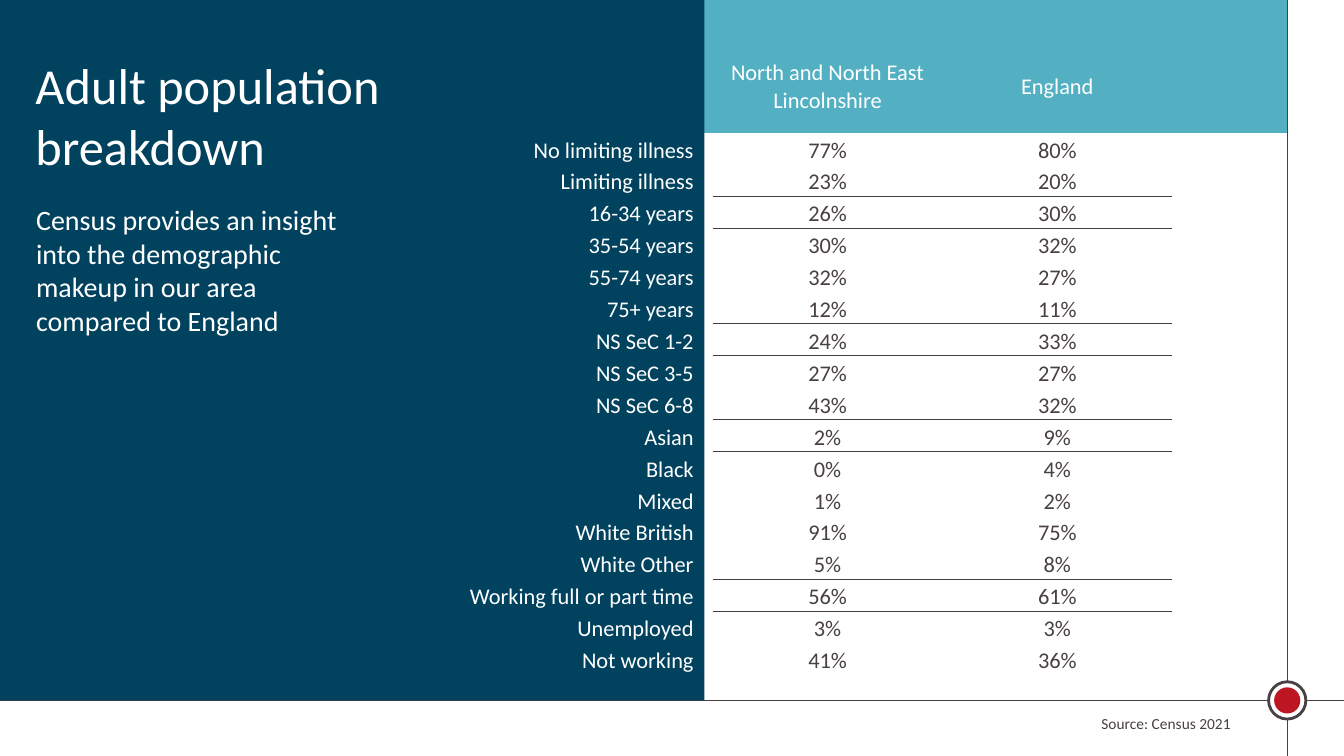
from lxml.etree import SubElement
from pptx import Presentation
from pptx.dml.color import RGBColor
from pptx.enum.shapes import MSO_CONNECTOR, MSO_SHAPE
from pptx.enum.text import MSO_ANCHOR, PP_ALIGN
from pptx.oxml.ns import qn
from pptx.util import Cm, Pt

WHITE = RGBColor(0xFF, 0xFF, 0xFF)
NAVY = RGBColor(0x01, 0x42, 0x5F)
TEAL = RGBColor(0x53, 0xB0, 0xC2)
CHARCOAL = RGBColor(0x48, 0x40, 0x43)
RED = RGBColor(0xBD, 0x16, 0x22)
NO_GRID_STYLE = "{2D5ABB26-0587-4C30-8999-92F81FD0307C}"

SLIDE_WIDTH, SLIDE_HEIGHT = 33.87, 19.05
RULE_X, RULE_Y = 32.44, 17.65
COLUMN_WIDTHS = (6.99, 5.79, 5.79)
HEADER_HEIGHT, BODY_HEIGHT = 2.29, 13.67

HEADINGS = ("", "North and North East Lincolnshire", "England")
GROUPS = (
    (("No limiting illness", "77%", "80%"),
     ("Limiting illness", "23%", "20%")),
    (("16-34 years", "26%", "30%"),
     ("35-54 years", "30%", "32%"),
     ("55-74 years", "32%", "27%"),
     ("75+ years", "12%", "11%")),
    (("NS SeC 1-2", "24%", "33%"),
     ("NS SeC 3-5", "27%", "27%"),
     ("NS SeC 6-8", "43%", "32%")),
    (("Asian", "2%", "9%"),
     ("Black", "0%", "4%"),
     ("Mixed", "1%", "2%"),
     ("White British", "91%", "75%"),
     ("White Other", "5%", "8%")),
    (("Working full or part time", "56%", "61%"),
     ("Unemployed", "3%", "3%"),
     ("Not working", "41%", "36%")),
)


class CensusSlide:
    """Draws styled elements on one slide, with lengths in centimetres."""

    font_name = "Calibri"

    def __init__(self, presentation):
        self.slide = presentation.slides.add_slide(presentation.slide_layouts[5])
        self.shapes = self.slide.shapes

    def apply(self, target, values):
        for name, value in values.items():
            setattr(target, name, value)

    def fill_text(self, text_frame, text, size, color, alignment=PP_ALIGN.LEFT):
        text_frame.text = text
        paragraph = text_frame.paragraphs[0]
        paragraph.alignment = alignment
        for run in paragraph.runs:
            self.apply(run.font, {"name": self.font_name, "size": Pt(size)})
            run.font.color.rgb = color

    def block(self, preset, left, top, width, height, fill, line=None):
        shape = self.shapes.add_shape(preset, Cm(left), Cm(top), Cm(width), Cm(height))
        shape.shadow.inherit = False
        shape.fill.solid()
        shape.fill.fore_color.rgb = fill
        if line is None:
            shape.line.fill.background()
        else:
            shape.line.color.rgb = line
            shape.line.width = Pt(2)

    def disc(self, diameter, fill, line=None):
        radius = diameter / 2
        self.block(MSO_SHAPE.OVAL, RULE_X - radius, RULE_Y - radius,
                   diameter, diameter, fill, line)

    def rule(self, start_x, start_y, end_x, end_y):
        connector = self.shapes.add_connector(
            MSO_CONNECTOR.STRAIGHT, Cm(start_x), Cm(start_y), Cm(end_x), Cm(end_y))
        connector.line.color.rgb = CHARCOAL
        connector.line.width = Pt(0.5)
        SubElement(connector._element.spPr, qn("a:effectLst"))

    def title(self, text, left, top, width, height):
        title = self.shapes.title
        self.shapes._spTree.append(title._element)
        self.apply(title, {"left": Cm(left), "top": Cm(top),
                           "width": Cm(width), "height": Cm(height)})
        self.apply(title.text_frame, {"word_wrap": True, "vertical_anchor": MSO_ANCHOR.TOP})
        self.fill_text(title.text_frame, text, 36, WHITE)

    def text(self, text, left, top, width, height, size, color, alignment=PP_ALIGN.LEFT):
        box = self.shapes.add_textbox(Cm(left), Cm(top), Cm(width), Cm(height))
        box.text_frame.word_wrap = True
        self.fill_text(box.text_frame, text, size, color, alignment)

    def border(self, cell, side):
        properties = cell._tc.get_or_add_tcPr()
        line = properties.makeelement(qn(f"a:{side}"), {"w": str(Pt(0.25))})
        fill = SubElement(line, qn("a:solidFill"))
        SubElement(fill, qn("a:srgbClr"), val=str(CHARCOAL))
        properties.insert(0, line)

    def cell(self, cell, text, color, alignment, anchor, right=0):
        self.apply(cell, {"margin_left": 0, "margin_right": Cm(right), "margin_top": 0,
                          "margin_bottom": 0, "vertical_anchor": anchor})
        cell.fill.background()
        self.fill_text(cell.text_frame, text, 16, color, alignment)

    def table(self, left, top):
        rows = [row for group in GROUPS for row in group]
        table = self.shapes.add_table(
            len(rows) + 1, len(HEADINGS), Cm(left), Cm(top),
            Cm(sum(COLUMN_WIDTHS)), Cm(HEADER_HEIGHT + BODY_HEIGHT)).table
        self.apply(table, {"first_row": False, "horz_banding": False})
        table._tbl.tblPr.find(qn("a:tableStyleId")).text = NO_GRID_STYLE
        for column, width in zip(table.columns, COLUMN_WIDTHS):
            column.width = Cm(width)
        for row in table.rows:
            row.height = Cm(BODY_HEIGHT / len(rows))
        table.rows[0].height = Cm(HEADER_HEIGHT)

        for column, heading in enumerate(HEADINGS):
            self.cell(table.cell(0, column), heading, WHITE, PP_ALIGN.CENTER, MSO_ANCHOR.MIDDLE)
        for index, (label, *values) in enumerate(rows, start=1):
            self.cell(table.cell(index, 0), label, WHITE, PP_ALIGN.RIGHT,
                      MSO_ANCHOR.BOTTOM, right=0.48)
            for column, value in enumerate(values, start=1):
                self.cell(table.cell(index, column), value, CHARCOAL,
                          PP_ALIGN.CENTER, MSO_ANCHOR.BOTTOM)

        last_row = 0
        for group in GROUPS[:-1]:
            last_row += len(group)
            for column in range(1, len(HEADINGS)):
                self.border(table.cell(last_row, column), "lnB")
                self.border(table.cell(last_row + 1, column), "lnT")


def main():
    presentation = Presentation()
    presentation.slide_width = Cm(SLIDE_WIDTH)
    presentation.slide_height = Cm(SLIDE_HEIGHT)
    census = CensusSlide(presentation)
    census.block(MSO_SHAPE.RECTANGLE, 11.53, 0, 20.91, 3.35, TEAL)
    census.rule(RULE_X, 0, RULE_X, SLIDE_HEIGHT)
    census.rule(0, RULE_Y, SLIDE_WIDTH, RULE_Y)
    census.disc(0.94, WHITE, CHARCOAL)
    census.disc(0.66, RED)
    census.block(MSO_SHAPE.RECTANGLE, 0, 0, 17.75, RULE_Y, NAVY)
    census.title("Adult population breakdown", 0.64, 1.24, 9.6, 1.88)
    census.text("Source: Census 2021", 15.9, 17.86, 15.37, 0.74, 11, CHARCOAL, PP_ALIGN.RIGHT)
    census.table(10.97, 1.04)
    census.text("Census provides an insight into the demographic makeup in our area "
                "compared to England", 0.66, 4.98, 8.56, 9.93, 20, WHITE)
    presentation.save("out.pptx")


if __name__ == "__main__":
    main()
